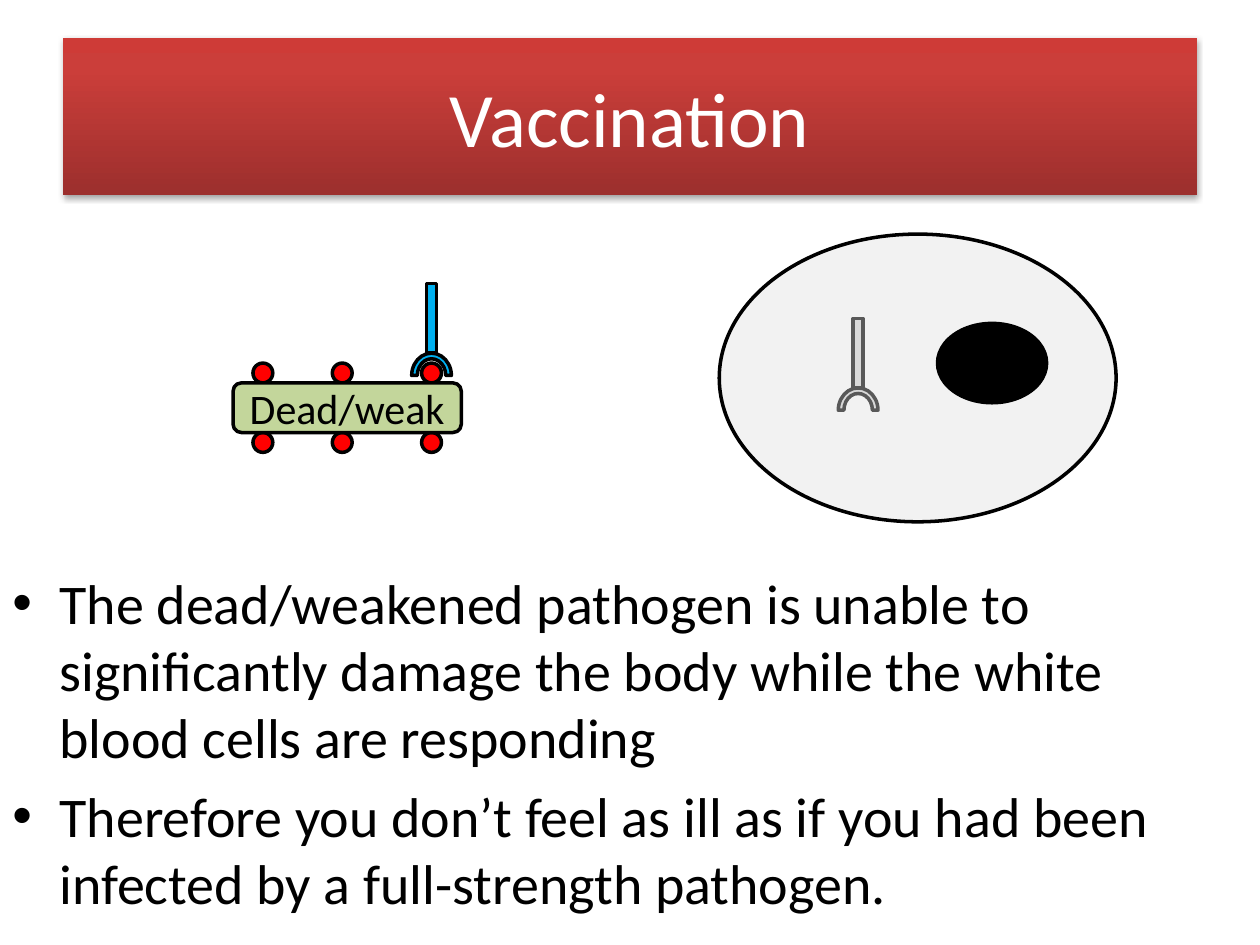
from copy import deepcopy
from dataclasses import dataclass

from lxml import etree
from pptx import Presentation
from pptx import util as u
from pptx.dml.color import RGBColor
from pptx.enum import shapes, text
from pptx.oxml.ns import qn


@dataclass(frozen=True)
class Theme:
    font: str = "Calibri"
    black: str = "000000"
    white: str = "FFFFFF"
    cell: str = "F2F2F2"
    faded: str = "D9D9D9"
    faded_line: str = "595959"
    antibody: str = "00B0F0"
    antigen: str = "FF0000"
    pathogen: str = "C3D69B"
    banner: tuple = ((0, "9C2F2D"), (0.8, "CB3E3A"), (1, "CE3B37"))
    title_size: int = 44
    body_size: int = 32
    label_size: int = 24
    line_width: int = 2


def apply(target, values):
    for name, value in values.items():
        setattr(target, name, value)


class SlideBuilder:
    def __init__(self, slide, theme):
        self.slide = slide
        self.theme = theme

    def shape(self, kind, box, fill=None, line=None):
        shape = self.slide.shapes.add_shape(kind, *map(u.Cm, box))
        shape.shadow.inherit = False
        if fill:
            shape.fill.solid()
            shape.fill.fore_color.rgb = RGBColor.from_string(fill)
        if line:
            shape.line.color.rgb = RGBColor.from_string(line)
            shape.line.width = u.Pt(self.theme.line_width)
        else:
            shape.line.fill.background()
        return shape

    def add_words(self, paragraph, words, size, color, align):
        paragraph.alignment = align
        run = paragraph.add_run()
        run.text = words
        apply(run.font, {"name": self.theme.font, "size": u.Pt(size)})
        run.font.color.rgb = RGBColor.from_string(color)

    def label(self, shape, words, size, color):
        apply(shape.text_frame, {"word_wrap": True, "vertical_anchor": text.MSO_ANCHOR.MIDDLE})
        self.add_words(shape.text_frame.paragraphs[0], words, size, color,
                       text.PP_ALIGN.CENTER)

    def banner(self, box, words):
        shape = self.shape(shapes.MSO_SHAPE.RECTANGLE, box)
        shape.fill.gradient()
        shape.fill.gradient_angle = 90
        properties = shape._element.spPr
        stops = properties.find(".//" + qn("a:gsLst"))
        stops.append(deepcopy(stops[0]))
        for stop, (position, color) in zip(shape.fill.gradient_stops, self.theme.banner):
            stop.position = position
            stop.color.rgb = RGBColor.from_string(color)
        shadow = etree.SubElement(
            properties.find(qn("a:effectLst")), qn("a:outerShdw"),
            blurRad=str(u.Pt(3.1)), dist=str(u.Pt(1.8)), dir="5400000", rotWithShape="0")
        color = etree.SubElement(shadow, qn("a:srgbClr"), val=self.theme.black)
        etree.SubElement(color, qn("a:alpha"), val="35000")
        self.label(shape, words, self.theme.title_size, self.theme.white)

    def bullets(self, box, items):
        frame = self.slide.shapes.add_textbox(*map(u.Cm, box)).text_frame
        frame.word_wrap = True
        for index, words in enumerate(items):
            paragraph = frame.add_paragraph() if index else frame.paragraphs[0]
            paragraph.space_before = u.Pt(self.theme.body_size * 0.2)
            self.add_words(paragraph, words, self.theme.body_size, self.theme.black,
                           text.PP_ALIGN.LEFT)
            properties = paragraph._p.get_or_add_pPr()
            indent = u.Cm(0.95)
            properties.set("marL", str(indent))
            properties.set("indent", str(-indent))
            etree.SubElement(properties, qn("a:buFont"), typeface="Arial")
            etree.SubElement(properties, qn("a:buChar"), char="•")

    def antibody(self, left, top, fill, line):
        arc = self.shape(shapes.MSO_SHAPE.BLOCK_ARC, (left, top + 1.4, 0.8, 0.9), fill, line)
        for index, value in enumerate((108, 0, 0.141)):
            arc.adjustments[index] = value
        self.shape(shapes.MSO_SHAPE.RECTANGLE, (left + 0.3, top, 0.2, 1.4), fill, line)

    def pathogen(self, left, top, words):
        theme = self.theme
        for row in (-0.4, 1):
            for column in (0.4, 2, 3.8):
                self.shape(shapes.MSO_SHAPE.OVAL, (left + column, top + row, 0.4, 0.4),
                           theme.antigen, theme.black)
        body = self.shape(shapes.MSO_SHAPE.ROUNDED_RECTANGLE, (left, top, 4.6, 1),
                          theme.pathogen, theme.black)
        self.label(body, words, theme.label_size, theme.black)


def main():
    presentation = Presentation()
    apply(presentation, {"slide_width": u.Cm(25.4), "slide_height": u.Cm(19.05)})
    theme = Theme()
    slide = presentation.slides.add_slide(presentation.slide_layouts[6])
    builder = SlideBuilder(slide, theme)

    builder.shape(shapes.MSO_SHAPE.OVAL, (14.5, 4.72, 8, 5.8), theme.cell, theme.black)
    builder.antibody(16.9, 6.42, theme.faded, theme.faded_line)
    builder.banner((1.27, 0.76, 22.86, 3.18), "Vaccination")
    builder.bullets((0, 11.33, 25.4, 7.72), (
        "The dead/weakened pathogen is unable to significantly damage the body "
        "while the white blood cells are responding",
        "Therefore you don’t feel as ill as if you had been infected by a "
        "full-strength pathogen.",
    ))
    builder.pathogen(4.7, 7.72, "Dead/weak")
    builder.shape(shapes.MSO_SHAPE.OVAL, (18.9, 6.52, 2.2, 1.6), theme.black, theme.black)
    builder.antibody(8.3, 5.72, theme.antibody, theme.black)

    presentation.save("out.pptx")


if __name__ == "__main__":
    main()
